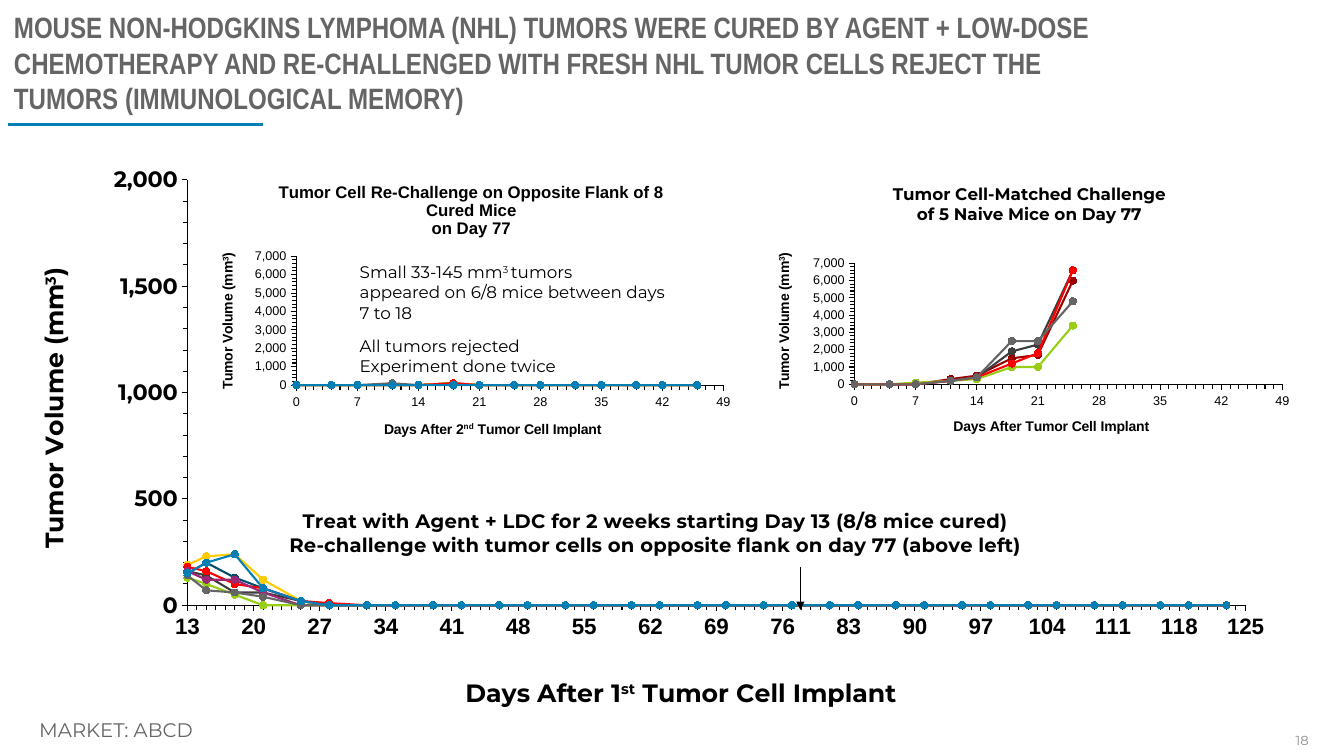
import pptx
import pptx.chart.data
import pptx.dml.color
import pptx.enum.chart
import pptx.enum.shapes
import pptx.enum.text
import pptx.oxml
import pptx.oxml.ns
import pptx.util

WIDTH, HEIGHT = pptx.util.Inches(13.333), pptx.util.Inches(7.5)
THEME = {
    "sans": "Arial", "narrow": "Arial Narrow", "brand": "Montserrat",
    "black": "000000", "grey": "656565", "pale": "8C8C8C", "blue": "047FB6",
    "purple": "9B2775", "red": "FF0002", "yellow": "FFCC01", "green": "98CE16",
    "navy": "024C6D", "dark": "3D3D3D", "maroon": "990001",
    "heading": 21, "axis_title": 18, "tick": 16, "chart_title": 14, "footer": 14,
    "note": 12, "inset_title": 12, "inset_axis_title": 10, "inset_tick": 9, "number": 9.3,
}
MOUSE_COLOURS = ["blue", "grey", "purple", "red", "yellow", "green", "navy", "dark"]
NAIVE_COLOURS = ["grey", "red", "green", "dark", "maroon"]
TREATED_DAYS = [13, 15, 18, 21, 25, 28, 32, 35, 39, 42, 46, 49, 53, 56, 60, 63, 67,
                70, 74, 77, 81, 84, 88, 91, 95, 98, 102, 105, 109, 112, 116, 119, 123]
RECHALLENGE_DAYS = [0, 4, 7, 11, 14, 18, 21, 25, 28, 32, 35, 39, 42, 46]
NAIVE_DAYS = RECHALLENGE_DAYS[:8]

# Volumes after the last listed day are zero.
TREATED = [
    [150, 200, 240, 80, 20], [140, 70, 60, 40], [160, 120, 120, 60],
    [180, 160, 100, 80, 20, 10], [190, 230, 240, 120, 20], [130, 100, 50],
    [150, 200, 130, 80, 20], [160, 140, 60, 60, 20],
]
LATE_TUMOR = [0, 0, 0, 0, 0, 100]
RECHALLENGED = [[], [0, 0, 0, 100], []] + [LATE_TUMOR] * 5
NAIVE = [
    [0, 0, 0, 200, 400, 2500, 2500, 4800], [0, 0, 0, 200, 400, 1200, 1800, 6600],
    [0, 0, 100, 200, 300, 1000, 1000, 3400], [0, 0, 0, 200, 400, 1900, 2300, 6600],
    [0, 0, 0, 300, 500, 1500, 1700, 6000],
]

INSET_AXES = {
    "days": {"minimum_scale": 0, "maximum_scale": 49, "major_unit": 7, "minor_unit": 1},
    "volume": {"minimum_scale": 0, "maximum_scale": 7000, "major_unit": 1000, "minor_unit": 200},
    "day_font": ("sans", "inset_tick", False), "volume_font": ("sans", "inset_tick", False),
    "axis_title_font": ("sans", "inset_axis_title", True),
}
# Areas and title corners are percentages of the slide's width and height.
MAIN_CHART = {
    "area": (2.25, 10.4, 93.68, 84), "plot": (13.95, 23.9, 78.72, 56.65),
    "days": {"minimum_scale": 13, "maximum_scale": 125, "major_unit": 7, "minor_unit": 1},
    "volume": {"minimum_scale": 0, "maximum_scale": 2000, "major_unit": 500, "minor_unit": 100},
    "day_font": ("sans", "tick", True), "volume_font": ("brand", "tick", True),
    "axis_title_font": ("brand", "axis_title", True),
    "title": (["Treat with Agent + LDC for 2 weeks starting Day 13 (8/8 mice cured)",
               "Re-challenge with tumor cells on opposite flank on day 77 (above left)"], (21.3, 67.1)),
    "title_font": ("brand", "chart_title", True),
    "day_title": (["Days After 1^st^ Tumor Cell Implant"], (34.4, 89.6)),
    "volume_title": (["Tumor Volume (mm^3^)"], (2.55, 35.2)),
    "x": TREATED_DAYS, "mice": TREATED, "colours": MOUSE_COLOURS,
}
RECHALLENGE_CHART = {
    **INSET_AXES,
    "area": (14.93, 22.27, 40.28, 38.27), "plot": (22.06, 33.9, 31.77, 17.06),
    "title": (["Tumor Cell Re-Challenge on Opposite Flank of 8 Cured Mice", "on Day 77"], (20.5, 23.7)),
    "title_font": ("sans", "inset_title", True),
    "day_title": (["Days After 2^nd^ Tumor Cell Implant"], (28.35, 55.1)),
    "volume_title": (["Tumor Volume (mm^3^)"], (16, 33)),
    "x": RECHALLENGE_DAYS, "mice": RECHALLENGED, "colours": MOUSE_COLOURS,
}
NAIVE_CHART = {
    **INSET_AXES,
    "area": (56.4, 22.4, 40.28, 38), "plot": (63.58, 34.85, 31.85, 16),
    "title": (["Tumor Cell-Matched Challenge", "of 5 Naive Mice on Day 77"], (66.2, 23.8)),
    "title_font": ("brand", "inset_title", True),
    "day_title": (["Days After Tumor Cell Implant"], (70.75, 54.9)),
    "volume_title": (["Tumor Volume (mm^3^)"], (57.4, 33)),
    "x": NAIVE_DAYS, "mice": NAIVE, "colours": NAIVE_COLOURS,
}


def colour(name):
    return pptx.dml.color.RGBColor.from_string(THEME[name])


def place(*shares):
    """Turn alternating width and height percentages into lengths."""
    return [round((HEIGHT if i % 2 else WIDTH) * share / 100) for i, share in enumerate(shares)]


def apply(target, values):
    for name, value in values.items():
        setattr(target, name, value)


def style_font(font, face, size, bold, tint="black"):
    apply(font, {"name": THEME[face], "size": pptx.util.Pt(THEME[size]), "bold": bold})
    font.color.rgb = colour(tint)


def write_lines(frame, lines, style):
    """Write one paragraph a line; text between carets is superscript."""
    for i, line in enumerate(lines):
        para = frame.add_paragraph() if i else frame.paragraphs[0]
        for part, words in enumerate(line.split("^")):
            if words:
                span = para.add_run()
                span.text = words
                style_font(span.font, *style)
                if part % 2:
                    span.font._element.set("baseline", "30000")


def add_text(slide, area, lines, style, anchor="TOP", align="LEFT"):
    frame = slide.shapes.add_textbox(*place(*area)).text_frame
    apply(frame, {"word_wrap": True,
                  "vertical_anchor": getattr(pptx.enum.text.MSO_ANCHOR, anchor)})
    write_lines(frame, lines, style)
    for para in frame.paragraphs:
        para.alignment = getattr(pptx.enum.text.PP_ALIGN, align)
    return frame


def add_line(slide, ends, tint, points, arrow=False):
    line = slide.shapes.add_connector(pptx.enum.shapes.MSO_CONNECTOR.STRAIGHT, *place(*ends))
    line.line.color.rgb = colour(tint)
    line.line.width = pptx.util.Pt(points)
    namespace = pptx.oxml.ns.nsdecls("a")
    if arrow:
        line.line._get_or_add_ln().append(
            pptx.oxml.parse_xml(f'<a:tailEnd {namespace} type="triangle"/>'))
    line._element.spPr.append(pptx.oxml.parse_xml(f"<a:effectLst {namespace}/>"))


def set_layout(element, index, chart_area, box):
    """Fix a chart part at a slide position: left and top, or a whole inner plot area."""
    for old in element.findall(pptx.oxml.ns.qn("c:layout")):
        element.remove(old)
    left, top, width, height = chart_area
    values = {"x": (box[0] - left) / width, "y": (box[1] - top) / height}
    target = ""
    if len(box) == 4:
        target = '<c:layoutTarget val="inner"/>'
        values.update(w=box[2] / width, h=box[3] / height)
    modes = "".join(f'<c:{name}Mode val="edge"/>' for name in "xy")
    shares = "".join(f'<c:{name} val="{value:.4f}"/>' for name, value in values.items())
    element.insert(index, pptx.oxml.parse_xml(
        f'<c:layout {pptx.oxml.ns.nsdecls("c")}><c:manualLayout>{target}{modes}{shares}'
        '</c:manualLayout></c:layout>'))


def write_chart_title(title, content, style, chart_area, turned=False):
    lines, corner = content
    write_lines(title.text_frame, lines, style)
    if turned:
        for name, value in {"rot": "-5400000", "vert": "horz"}.items():
            title.text_frame._txBody.bodyPr.set(name, value)
    set_layout(title._element, 1, chart_area, corner)


def style_axis(axis, scale, font, number_format):
    outside = pptx.enum.chart.XL_TICK_MARK.OUTSIDE
    apply(axis, {**scale, "has_major_gridlines": False, "has_minor_gridlines": False,
                 "major_tick_mark": outside, "minor_tick_mark": outside,
                 "crosses": pptx.enum.chart.XL_AXIS_CROSSES.MINIMUM})
    apply(axis.tick_labels, {"number_format": number_format, "number_format_is_linked": False})
    style_font(axis.tick_labels.font, *font)
    axis.format.line.color.rgb = colour("black")
    axis.format.line.width = pptx.util.Pt(0.75)


def style_series(series, tint):
    series.smooth = False
    series.format.line.width = pptx.util.Pt(1.5)
    apply(series.marker, {"style": pptx.enum.chart.XL_MARKER_STYLE.CIRCLE, "size": 5})
    series.marker.format.fill.solid()
    for part in (series.format.line.color, series.marker.format.line.color,
                 series.marker.format.fill.fore_color):
        part.rgb = colour(tint)


def add_volume_chart(slide, design):
    data = pptx.chart.data.XyChartData()
    for number, volumes in enumerate(design["mice"], 1):
        series = data.add_series(f"Series {number}")
        padded = volumes + [0] * (len(design["x"]) - len(volumes))
        for day, volume in zip(design["x"], padded):
            series.add_data_point(day, volume)
    area = design["area"]
    chart = slide.shapes.add_chart(
        pptx.enum.chart.XL_CHART_TYPE.XY_SCATTER_LINES, *place(*area), data).chart
    apply(chart, {"has_legend": False, "has_title": True})
    apply(chart.font, {"name": "Calibri", "size": pptx.util.Pt(10)})
    chart.plots[0].vary_by_categories = False
    for series, tint in zip(chart.plots[0].series, design["colours"]):
        style_series(series, tint)
    write_chart_title(chart.chart_title, design["title"], design["title_font"], area)
    days, volume = chart.category_axis, chart.value_axis
    style_axis(days, design["days"], design["day_font"], "General")
    style_axis(volume, design["volume"], design["volume_font"], "#,##0")
    font = design["axis_title_font"]
    write_chart_title(days.axis_title, design["day_title"], font, area)
    write_chart_title(volume.axis_title, design["volume_title"], font, area, turned=True)
    set_layout(chart._chartSpace.chart.plotArea, 0, area, design["plot"])


def main():
    deck = pptx.Presentation()
    apply(deck, {"slide_width": WIDTH, "slide_height": HEIGHT})
    slide = deck.slides.add_slide(deck.slide_layouts[6])
    add_text(slide, (94.8, 95.2, 3.3, 5.33), ["18"], ("brand", "number", False, "pale"), "MIDDLE", "RIGHT")
    add_line(slide, (19.58, 16.53, 0.6, 16.53), "blue", 2.25)
    add_text(slide, (2.18, 94.27, 38.7, 4.53), ["MARKET: ABCD"], ("brand", "footer", False, "grey"))
    add_text(slide, (0.3, 0.1, 83.18, 16.27), [
        "MOUSE NON-HODGKINS LYMPHOMA (NHL) TUMORS WERE CURED BY AGENT + LOW-DOSE "
        "CHEMOTHERAPY AND RE-CHALLENGED WITH FRESH NHL TUMOR CELLS REJECT THE "
        "TUMORS (IMMUNOLOGICAL MEMORY)"], ("narrow", "heading", True, "grey"), "MIDDLE")
    for design in (MAIN_CHART, RECHALLENGE_CHART, NAIVE_CHART):
        add_volume_chart(slide, design)
    add_line(slide, (59.55, 75.07, 59.55, 80.67), "black", 1, arrow=True)
    note = add_text(slide, (26.03, 34, 25.2, 16.67), [
        "Small 33-145 mm^3 ^tumors", "appeared on 6/8 mice between days 7 to 18",
        "All tumors rejected", "Experiment done twice"], ("brand", "note", False))
    note.paragraphs[2].space_before = pptx.util.Pt(9.5)
    deck.save("out.pptx")


if __name__ == "__main__":
    main()
